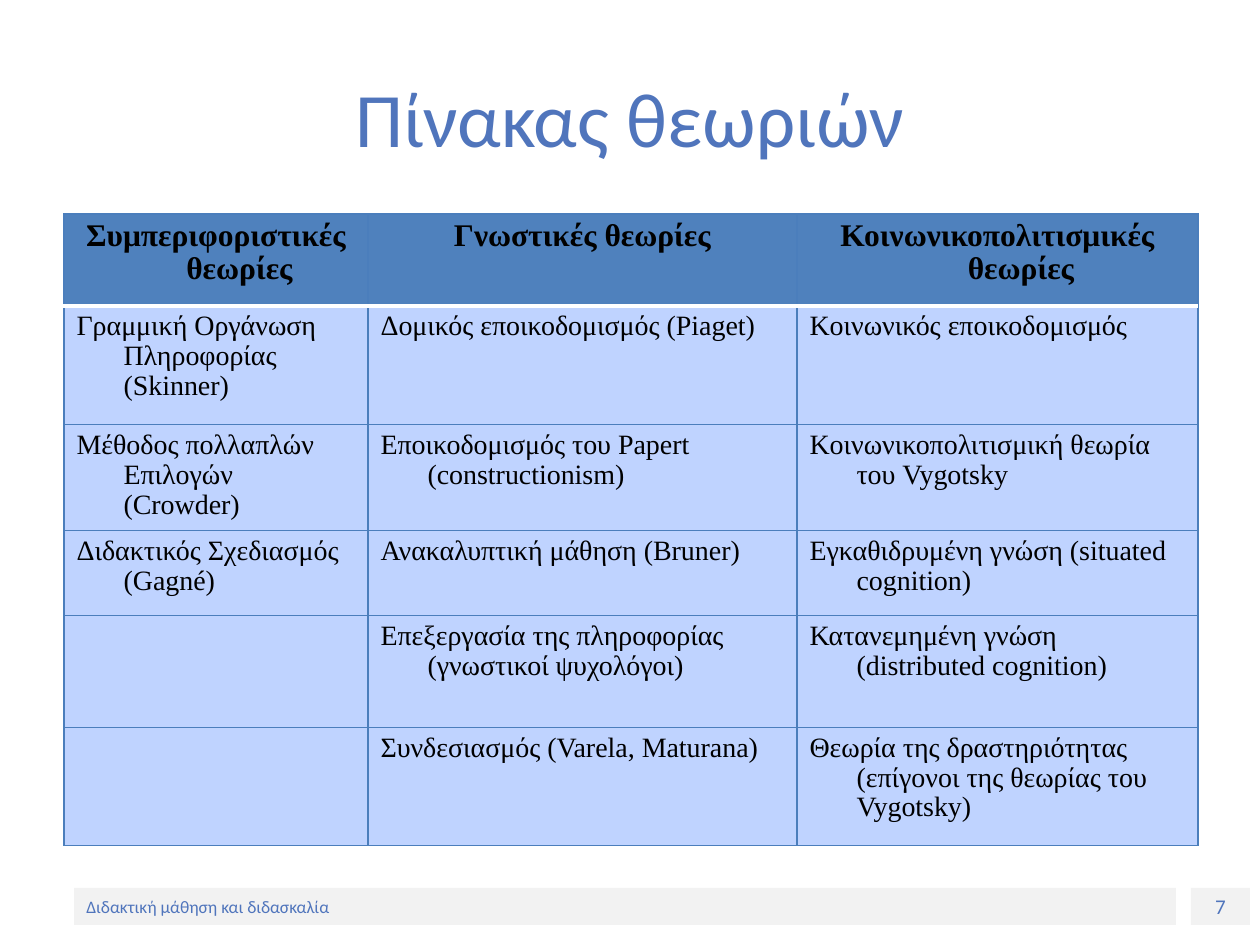
"""Build a slide with a table of learning theories, a title and a footer."""
from lxml import etree
from pptx import Presentation, util as u
from pptx.dml.color import RGBColor
from pptx.enum import shapes, text
from pptx.oxml import ns

SCALE = 914400 / 126
BLUE, BORDER, HEADER, BODY = "5075BC", "4B7EBC", "4F81BD", "BFD3FF"
CENTER, LEFT = text.PP_ALIGN.CENTER, text.PP_ALIGN.LEFT


def px(*lengths):
    return [round(length * SCALE) for length in lengths]


def write(frame, wording, color, align, formats):
    para = frame.paragraphs[0]
    para.alignment = align
    span = para.add_run()
    span.text = wording
    span.font.color.rgb = RGBColor.from_string(color)
    for name, value in formats.items():
        setattr(span.font, name, value)
    return para


deck = Presentation()
deck.slide_width, deck.slide_height = px(1260, 945)
page = deck.slides.add_slide(deck.slide_layouts[5])

title = page.shapes.title
title.left, title.top, title.width, title.height = px(63, 38, 1134, 157)
title.text_frame.vertical_anchor = text.MSO_ANCHOR.MIDDLE
write(title.text_frame, "Πίνακας θεωριών", BLUE, CENTER,
      {"name": "Calibri", "size": u.Pt(44)}).space_after = u.Pt(6)

footers = [
    ("Διδακτική μάθηση και διδασκαλία", 74, 1102, 10, LEFT),
    ("7", 1191, 59, 12, CENTER),
]
for wording, left, width, size, align in footers:
    box = page.shapes.add_shape(shapes.MSO_SHAPE.RECTANGLE, *px(left, 888, width, 37))
    box.shadow.inherit = False
    box.fill.solid()
    box.fill.fore_color.rgb = RGBColor.from_string("F2F2F2")
    box.line.fill.background()
    box.text_frame.word_wrap = True
    box.text_frame.vertical_anchor = text.MSO_ANCHOR.MIDDLE
    write(box.text_frame, wording, BLUE, align, {"name": "Calibri", "size": u.Pt(size)})

theories = [
    ("Συμπεριφοριστικές θεωρίες", "Γνωστικές θεωρίες", "Κοινωνικοπολιτισμικές θεωρίες"),
    ("Γραμμική Οργάνωση Πληροφορίας (Skinner)", "Δομικός εποικοδομισμός (Piaget)",
     "Κοινωνικός εποικοδομισμός"),
    ("Μέθοδος πολλαπλών Επιλογών (Crowder)", "Εποικοδομισμός του Papert (constructionism)",
     "Κοινωνικοπολιτισμική θεωρία του Vygotsky"),
    ("Διδακτικός Σχεδιασμός (Gagné)", "Ανακαλυπτική μάθηση (Bruner)",
     "Εγκαθιδρυμένη γνώση (situated cognition)"),
    ("", "Επεξεργασία της πληροφορίας (γνωστικοί ψυχολόγοι)",
     "Κατανεμημένη γνώση (distributed cognition)"),
    ("", "Συνδεσιασμός (Varela, Maturana)",
     "Θεωρία της δραστηριότητας (επίγονοι της θεωρίας του Vygotsky)"),
]
widths, heights = px(304, 429, 401), px(92, 119, 106, 85, 112, 118)
table = page.shapes.add_table(len(heights), len(widths), *px(64, 214),
                              sum(widths), sum(heights)).table
for column, width in zip(table.columns, widths):
    column.width = width
for row, height in zip(table.rows, heights):
    row.height = height

for r, names in enumerate(theories):
    heading = r == 0
    for c, wording in enumerate(names):
        cell = table.cell(r, c)
        properties = cell._tc.get_or_add_tcPr()
        for side in "LRTB":
            divider = (r, side) in [(0, "B"), (1, "T")]
            line = etree.SubElement(properties, ns.qn(f"a:ln{side}"),
                                    w=str(u.Pt(2 if divider else 0.75)))
            paint = etree.SubElement(line, ns.qn("a:solidFill"))
            etree.SubElement(paint, ns.qn("a:srgbClr"), val="FFFFFF" if divider else BORDER)
        cell.fill.solid()
        cell.fill.fore_color.rgb = RGBColor.from_string(HEADER if heading else BODY)
        if wording:
            para = write(cell.text_frame, wording, "000000", CENTER if heading else LEFT,
                         {"name": "Times New Roman", "size": u.Pt(18 if heading else 16),
                          "bold": heading})
            para.line_spacing = 0.95
            indent, = px(47)
            para._p.get_or_add_pPr().set("marL", str(indent))
            para._p.get_or_add_pPr().set("indent", str(-indent))

deck.save("out.pptx")
